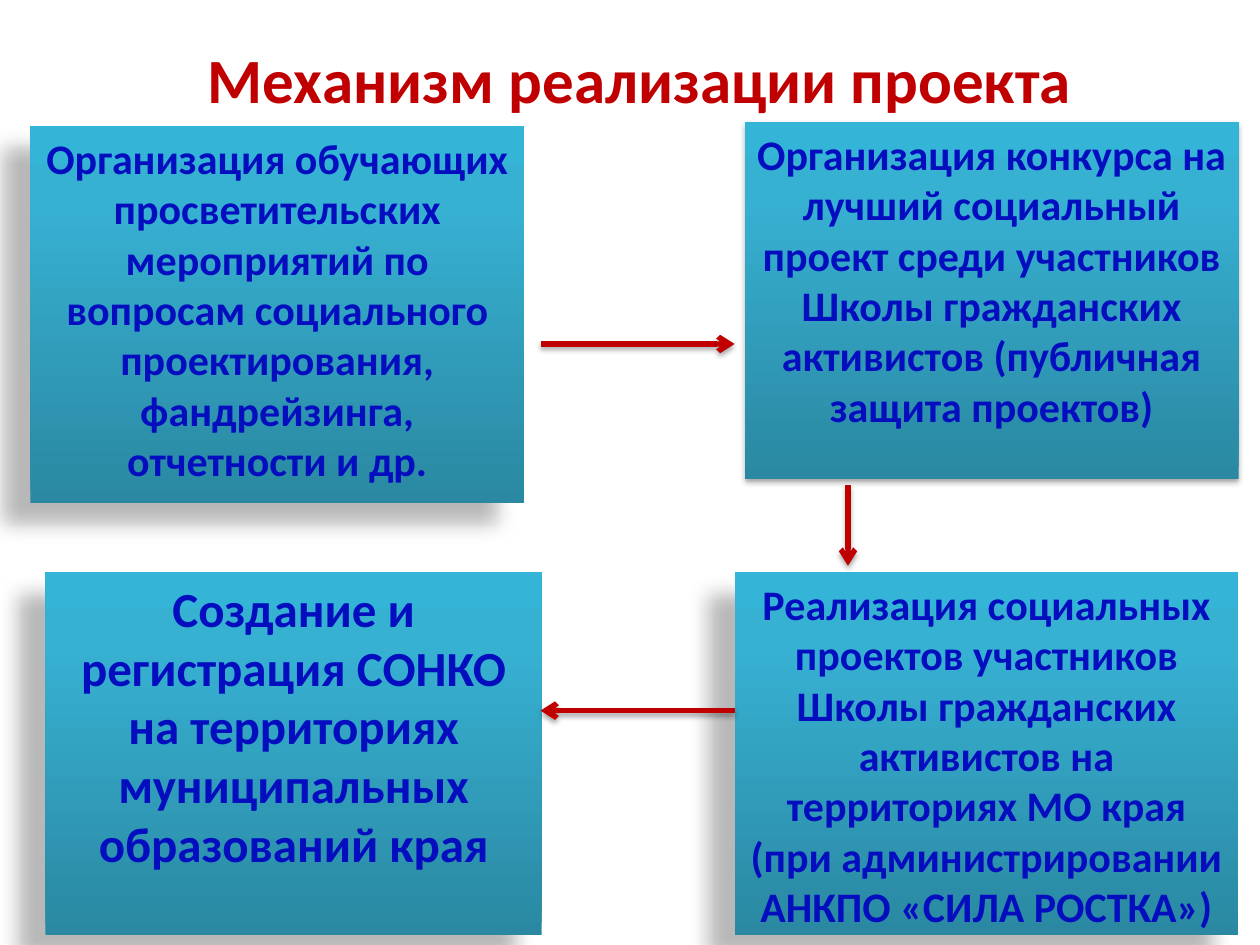
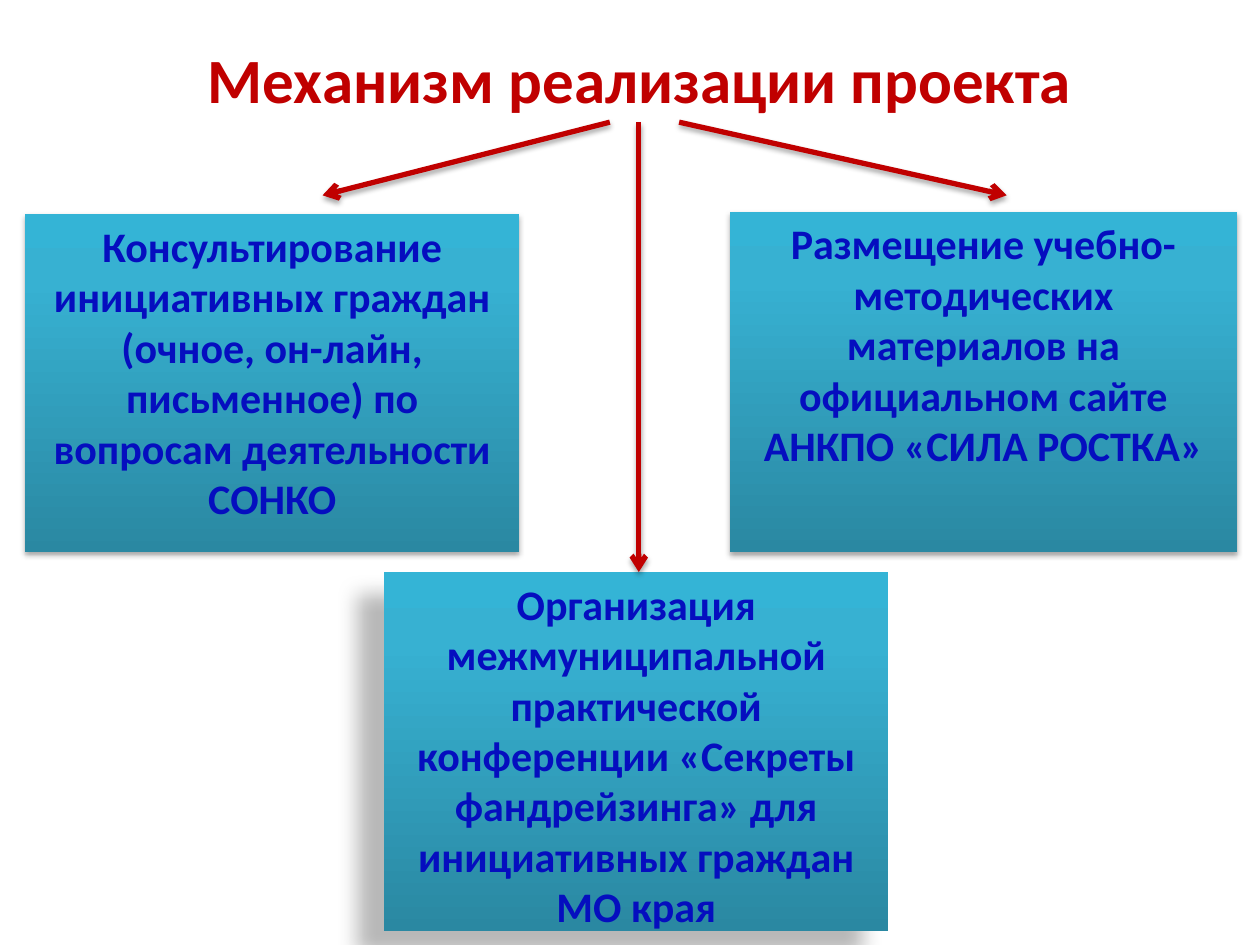
from dataclasses import dataclass

from lxml.etree import SubElement as add_element
from pptx import Presentation
from pptx.dml.color import RGBColor
from pptx.enum.shapes import MSO_CONNECTOR as Connector, MSO_SHAPE as Preset
from pptx.enum.text import MSO_ANCHOR as Anchor, MSO_AUTO_SIZE as AutoSize, PP_ALIGN as Align
from pptx.oxml.ns import qn
from pptx.util import Inches, Pt

# Shared style
COLORS = {
    "accent": "C00000",
    "text": "050EBF",
    "box_dark": "2A88A2",
    "box_mid": "37B1D2",
    "box_light": "34B4D6",
    "shadow": "000000",
}
BOX_GRADIENT = ((0, "box_dark"), (80, "box_mid"), (100, "box_light"))
FONT = "Calibri"
TITLE = "Механизм реализации проекта"
TITLE_ONLY = 5

# Grid of 100 columns by 75 rows
WIDTH, HEIGHT = Inches(10), Inches(7.5)
COLUMN, ROW = WIDTH / 100, HEIGHT / 75
LOWER_ROW = 45.4
ARROW_TOP = 9.7


@dataclass(frozen=True)
class Shadow:
    opacity: int
    blur: float
    distance: float
    angle: int


DEEP = Shadow(28, 11.8, 19.7, 141)
SOFT = Shadow(35, 3.1, 1.8, 90)


@dataclass(frozen=True)
class Step:
    column: float
    row: float
    columns: float
    rows: float
    lines: tuple[str, ...]
    shadow: Shadow = DEEP
    size: int = 24


@dataclass(frozen=True)
class Arrow:
    start: tuple[float, float]
    end: tuple[float, float]


@dataclass(frozen=True)
class Scheme:
    steps: tuple[Step, ...]
    arrows: tuple[Arrow, ...]


SCHEMES = (
    # Four consecutive steps
    Scheme(
        steps=(
            Step(2.4, 10, 39.2, 29.9, (
                "Организация обучающих просветительских мероприятий по вопросам "
                "социального проектирования, фандрейзинга, отчетности и др.",)),
            Step(58.3, LOWER_ROW, 40, 28.8, (
                "Реализация социальных проектов участников Школы гражданских активистов "
                "на территориях МО края (при администрировании АНКПО «СИЛА РОСТКА»)",)),
            Step(59.1, 9.7, 39.2, 28.3, (
                "Организация конкурса на лучший социальный проект среди участников "
                "Школы гражданских активистов (публичная защита проектов)",), SOFT),
            Step(3.6, LOWER_ROW, 39.4, 28.8, (
                "Создание и регистрация СОНКО на территориях муниципальных "
                "образований края",), size=28),
        ),
        arrows=(
            Arrow((42.9, 27.3), (58.3, 27.3)),
            Arrow((67.3, 38.5), (67.3, 44.9)),
            Arrow((58.3, 56.4), (42.9, 56.4)),
        ),
    ),
    # Three parallel activities
    Scheme(
        steps=(
            Step(57.9, 16.8, 40.3, 27, (
                "Размещение учебно-методических материалов на официальном сайте "
                "АНКПО «СИЛА РОСТКА»",), SOFT),
            Step(30.5, LOWER_ROW, 40, 28.5, (
                "Организация межмуниципальной практической конференции "
                "«Секреты фандрейзинга» для инициативных граждан",
                "МО края")),
            Step(2, 17, 39.2, 26.8, (
                "Консультирование инициативных граждан (очное, он-лайн, письменное) "
                "по вопросам деятельности СОНКО",), SOFT),
        ),
        arrows=(
            Arrow((48.4, ARROW_TOP), (25.6, 15.5)),
            Arrow((53.9, ARROW_TOP), (79.9, 15.5)),
            Arrow((50.7, ARROW_TOP), (50.7, LOWER_ROW)),
        ),
    ),
)


def across(columns: float) -> int:
    return round(columns * COLUMN)


def down(rows: float) -> int:
    return round(rows * ROW)


def color(name: str) -> RGBColor:
    return RGBColor.from_string(COLORS[name])


def style_paragraph(para, size: int, color_name: str) -> None:
    para.alignment = Align.CENTER
    para.font.name = FONT
    para.font.size = Pt(size)
    para.font.bold = True
    para.font.color.rgb = color(color_name)


def add_shadow(properties, shadow: Shadow) -> None:
    effects = add_element(properties, qn("a:effectLst"))
    outer = add_element(
        effects, qn("a:outerShdw"),
        blurRad=str(Pt(shadow.blur)), dist=str(Pt(shadow.distance)),
        dir=str(shadow.angle * 60000), algn="ctr", rotWithShape="0")
    tint = add_element(outer, qn("a:srgbClr"), val=COLORS["shadow"])
    add_element(tint, qn("a:alpha"), val=str(shadow.opacity * 1000))


def add_gradient(properties) -> None:
    gradient = add_element(properties, qn("a:gradFill"), rotWithShape="1")
    stops = add_element(gradient, qn("a:gsLst"))
    for position, name in BOX_GRADIENT:
        stop = add_element(stops, qn("a:gs"), pos=str(position * 1000))
        add_element(stop, qn("a:srgbClr"), val=COLORS[name])
    add_element(gradient, qn("a:lin"), ang=str(270 * 60000), scaled="0")


def set_title(slide) -> None:
    title = slide.shapes.title
    title.left, title.top = across(9.1), down(2.7)
    title.width, title.height = across(83.3), down(7.1)
    frame = title.text_frame
    frame.auto_size = AutoSize.NONE
    frame.vertical_anchor = Anchor.MIDDLE
    frame.text = TITLE
    style_paragraph(frame.paragraphs[0], 36, "accent")


def draw_step(slide, step: Step) -> None:
    box = slide.shapes.add_shape(
        Preset.RECTANGLE, across(step.column), down(step.row),
        across(step.columns), down(step.rows))
    properties = box.element.spPr
    add_gradient(properties)
    box.line.fill.background()
    add_shadow(properties, step.shadow)
    frame = box.text_frame
    frame.word_wrap = True
    frame.vertical_anchor = Anchor.TOP
    frame.text = "\n".join(step.lines)
    for para in frame.paragraphs:
        style_paragraph(para, step.size, "text")


def draw_arrow(slide, arrow: Arrow) -> None:
    (start_column, start_row), (end_column, end_row) = arrow.start, arrow.end
    connector = slide.shapes.add_connector(
        Connector.STRAIGHT, across(start_column), down(start_row),
        across(end_column), down(end_row))
    connector.line.color.rgb = color("accent")
    connector.line.width = Pt(3)
    properties = connector.element.spPr
    add_element(properties.find(qn("a:ln")), qn("a:tailEnd"), type="arrow")
    add_shadow(properties, SOFT)


def main() -> None:
    deck = Presentation()
    deck.slide_width, deck.slide_height = WIDTH, HEIGHT
    for scheme in SCHEMES:
        slide = deck.slides.add_slide(deck.slide_layouts[TITLE_ONLY])
        set_title(slide)
        for step in scheme.steps:
            draw_step(slide, step)
        for arrow in scheme.arrows:
            draw_arrow(slide, arrow)
    deck.save("out.pptx")


if __name__ == "__main__":
    main()
